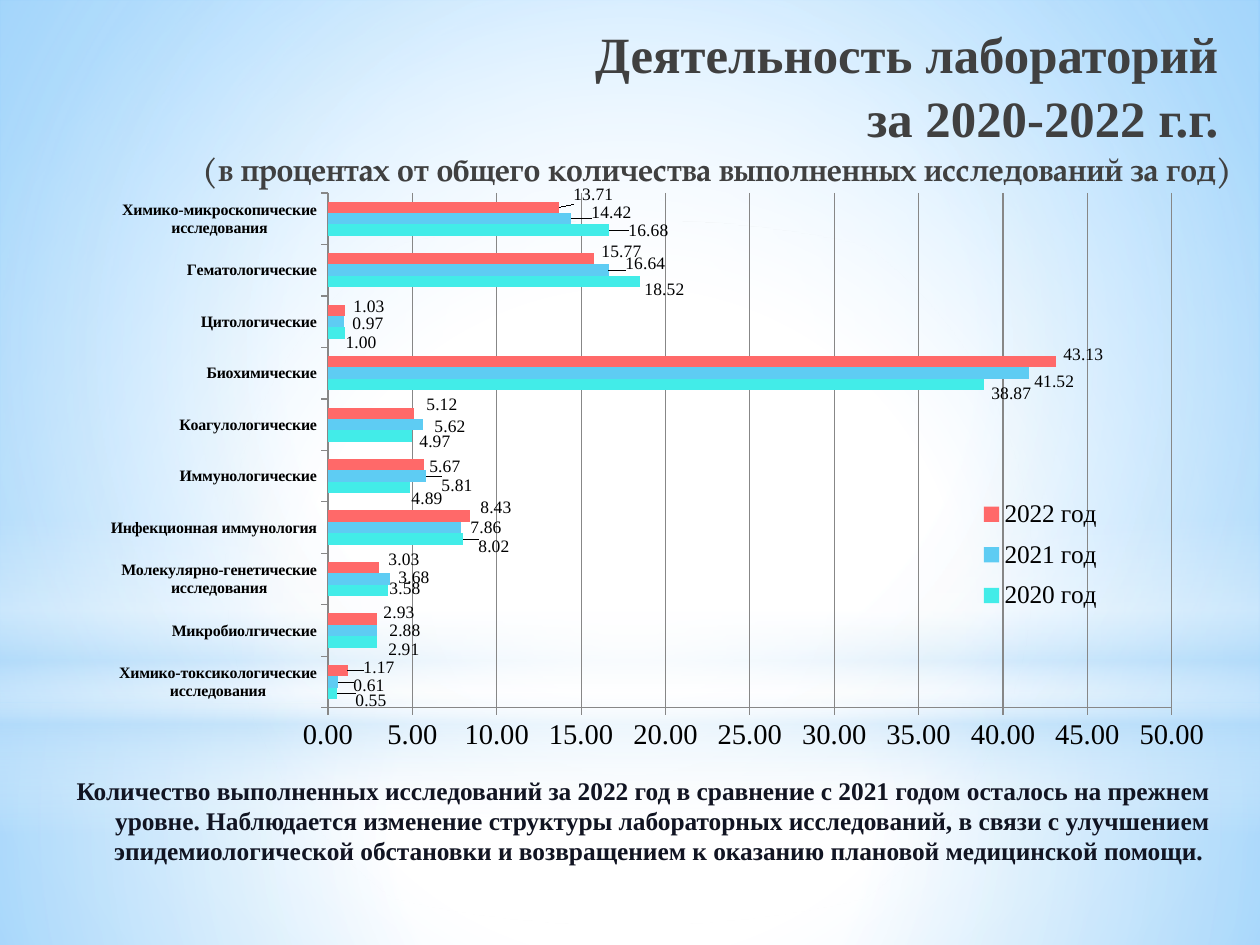
from copy import deepcopy
from lxml import etree
from pptx import Presentation
from pptx import util as u
from pptx.chart.data import CategoryChartData
from pptx.dml.color import RGBColor
from pptx.enum import chart as charts, shapes, text
from pptx.oxml import ns, parse_xml

SCALE = 8000
PAGE = (1260, 945)
SERIF, TITLE_SERIF = "Times New Roman", "TeX Gyre Pagella"
COLORS = {"title": "404040", "body": "111422", "black": "000000", "grid": "878787",
          "white": "FFFFFF", "sky": "B4DCFA", "blue": "63BCFF",
          "2020 год": "42ECE8", "2021 год": "5ECCF3", "2022 год": "FF6969"}
CATEGORIES = ["Химико-токсикологические исследования", "Микробиолгические",
              "Молекулярно-генетические исследования", "Инфекционная иммунология",
              "Иммунологические", "Коагулологические", "Биохимические",
              "Цитологические", "Гематологические", "Химико-микроскопические исследования"]
VALUES = {
    "2020 год": [0.55, 2.91, 3.58, 8.02, 4.89, 4.97, 38.87, 1.00, 18.52, 16.68],
    "2021 год": [0.61, 2.88, 3.68, 7.86, 5.81, 5.62, 41.52, 0.97, 16.64, 14.42],
    "2022 год": [1.17, 2.93, 3.03, 8.43, 5.67, 5.12, 43.13, 1.03, 15.77, 13.71]}
LABEL_SPOTS = {
    "2020 год": [(356, 701), (389, 650), (390, 589), (479, 547), (412, 499),
                 (420, 442), (992, 394), (346, 343), (645, 290), (629, 231)],
    "2021 год": [(354, 686), (390, 631), (399, 578), (471, 528), (442, 486),
                 (435, 427), (1035, 382), (353, 324), (626, 264), (592, 213)],
    "2022 год": [(364, 668), (384, 613), (389, 560), (481, 508), (430, 467),
                 (427, 405), (1064, 354), (354, 307), (602, 252), (574, 195)]}
PLOT = (328, 193, 844, 515)
LEGEND = (978, 488, 125, 134)
AXIS_MAX, LABEL_GAP = 50, 5
CENTER = (50, 50, 50, 50)


def emu(*lengths):
    """Turn px lengths into EMU."""
    return [u.Emu(length * SCALE) for length in lengths]


def color(name):
    """Return a named colour."""
    return RGBColor.from_string(COLORS[name])


def style(font, size, name=SERIF, bold=False, tone="black"):
    """Format a font."""
    font.size, font.name, font.bold = u.Pt(size), name, bold
    font.color.rgb = color(tone)


def paint_gradient(fill, holder, stops, focus=None):
    """Fill with a circular gradient around a focus, or a vertical one."""
    fill.gradient()
    marks = "".join(
        f'<a:gs pos="{spot * 1000}"><a:srgbClr val="{COLORS[tone]}">'
        f'<a:alpha val="{alpha * 1000}"/></a:srgbClr></a:gs>' for spot, tone, alpha in stops)
    shade = '<a:lin ang="5400000" scaled="0"/>'
    if focus:
        sides = " ".join(f'{side}="{part * 1000}"' for side, part in zip("ltrb", focus))
        shade = f'<a:path path="circle"><a:fillToRect {sides}/></a:path>'
    gradient = parse_xml(f'<a:gradFill {ns.nsdecls("a")} rotWithShape="1">'
                         f'<a:gsLst>{marks}</a:gsLst>{shade}</a:gradFill>')
    holder.replace(holder.find(ns.qn("a:gradFill")), gradient)


def add_glow(page, box, stops, focus=CENTER, kind=shapes.MSO_SHAPE.RECTANGLE):
    """Add one translucent background shape."""
    glow = page.shapes.add_shape(kind, *emu(*box))
    glow.shadow.inherit = False
    glow.line.fill.background()
    paint_gradient(glow.fill, glow._element.spPr, stops, focus)


def add_backdrop(page, box):
    """Paint the page and its sky bands."""
    left, top, width, height = box
    horizon = 704
    fill = page.background.fill
    fill.solid()
    holder = page._element.find(".//" + ns.qn("p:bgPr"))
    paint_gradient(fill, holder, [(0, "white", 100), (42, "white", 100), (100, "blue", 100)],
                   (24, 44, 24, 12))
    add_glow(page, (left, top + horizon, width, height - horizon),
             [(0, "white", 91), (37, "white", 76), (100, "sky", 79)])
    add_glow(page, (left, top, width, horizon),
             [(0, "white", 89), (48, "white", 62), (100, "sky", 79)])
    add_glow(page, (left, top + 519, width, 315),
             [(0, "white", 0), (29, "white", 30), (45, "sky", 40), (55, "white", 26),
              (65, "sky", 60), (100, "white", 0)], None)
    add_glow(page, (left, top + 221, width, horizon),
             [(0, "white", 100), (56, "white", 0)], kind=shapes.MSO_SHAPE.OVAL)


def add_title(page, box):
    """Fill the title placeholder and bring it above the backdrop."""
    title = page.shapes.title
    title.left, title.top, title.width, title.height = emu(*box)
    page.shapes._spTree.append(title._element)
    frame = title.text_frame
    frame.auto_size = text.MSO_AUTO_SIZE.NONE
    frame.vertical_anchor = text.MSO_ANCHOR.MIDDLE
    para = frame.paragraphs[0]
    para.alignment = text.PP_ALIGN.RIGHT
    para.line_spacing = 1.05
    lines = [("Деятельность лабораторий ", 32, SERIF), ("за 2020-2022 г.г. ", 32, SERIF),
             ("(в процентах от общего количества выполненных исследований за год)",
              20, TITLE_SERIF)]
    for number, (words, size, name) in enumerate(lines):
        if number:
            para.add_line_break()
            para._p[-1].append(deepcopy(span._r.rPr))
        span = para.add_run()
        span.text = words
        style(span.font, size, name, True, "title")


def add_layout(parent, place, index, edge=None):
    """Insert a manual layout of fractions into a chart part."""
    rules = [("layoutTarget", "inner")] if edge == "inner" else []
    if edge:
        rules += [("xMode", "edge"), ("yMode", "edge")]
    rules += zip("xywh", (round(part, 4) for part in place))
    for old in parent.findall(ns.qn("c:layout")):
        parent.remove(old)
    layout = etree.Element(ns.qn("c:layout"))
    manual = etree.SubElement(layout, ns.qn("c:manualLayout"))
    for tag, value in rules:
        etree.SubElement(manual, ns.qn("c:" + tag)).set("val", str(value))
    parent.insert(index, layout)


def fractions(part, box):
    """Express a part as fractions of the box."""
    left, top, width, height = box
    return ((part[0] - left) / width, (part[1] - top) / height,
            part[2] / width, part[3] / height)


def place_labels(series, order, box):
    """Format the value labels and move them to their spots."""
    labels = series.data_labels
    labels.show_value = True
    labels.number_format, labels.number_format_is_linked = "0.00", False
    style(labels.font, 11)
    pitch = PLOT[3] / len(CATEGORIES)
    bar = pitch / 4.5
    for index, (value, spot) in enumerate(zip(series.values, LABEL_SPOTS[series.name])):
        label = series.points[index].data_label
        style(label.font, 11)
        label.position = charts.XL_LABEL_POSITION.OUTSIDE_END
        start = PLOT[0] + PLOT[2] * value / AXIS_MAX + LABEL_GAP
        middle = PLOT[1] + PLOT[3] - pitch * (index + 0.5) + bar * (1 - order)
        shift = ((spot[0] - start) / box[2], (spot[1] - middle) / box[3])
        add_layout(labels._element.findall(ns.qn("c:dLbl"))[index], shift, 1)


def add_bars(page, box):
    """Add the bar chart of test shares by year."""
    data = CategoryChartData(number_format="0.00")
    data.categories = CATEGORIES
    for year, values in VALUES.items():
        data.add_series(year, values)
    chart = page.shapes.add_chart(charts.XL_CHART_TYPE.BAR_CLUSTERED, *emu(*box), data).chart
    style(chart.font, 18, TITLE_SERIF)
    chart.has_title = False
    chart.has_legend = True
    chart.legend.position = charts.XL_LEGEND_POSITION.RIGHT
    chart.legend.include_in_layout = False
    style(chart.legend.font, 16)
    add_layout(chart.legend._element, fractions(LEGEND, box), 1, "outer")
    add_layout(chart._chartSpace.chart.plotArea, fractions(PLOT, box), 0, "inner")
    names, scale = chart.category_axis, chart.value_axis
    style(names.tick_labels.font, 10, bold=True)
    style(scale.tick_labels.font, 18)
    scale.tick_labels.number_format = "0.00"
    scale.tick_labels.number_format_is_linked = False
    scale.minimum_scale, scale.maximum_scale, scale.major_unit = 0, AXIS_MAX, 5
    scale.has_major_gridlines = True
    for line in (names.format.line, scale.format.line, scale.major_gridlines.format.line):
        line.color.rgb, line.width = color("grid"), u.Pt(0.75)
    plot = chart.plots[0]
    plot.gap_width, plot.overlap, plot.vary_by_categories = 150, 0, False
    for order, series in enumerate(plot.series):
        series.format.fill.solid()
        series.format.fill.fore_color.rgb = color(series.name)
        place_labels(series, order, box)


def add_summary(page, box):
    """Add the closing paragraph."""
    frame = page.shapes.add_textbox(*emu(*box)).text_frame
    frame.word_wrap = True
    para = frame.paragraphs[0]
    para.alignment = text.PP_ALIGN.RIGHT
    span = para.add_run()
    span.text = ("Количество выполненных исследований за 2022 год в сравнение с 2021 годом "
                 "осталось на прежнем уровне. Наблюдается изменение структуры лабораторных "
                 "исследований, в связи с улучшением эпидемиологической обстановки и "
                 "возвращением к оказанию плановой медицинской помощи. ")
    style(span.font, 16, bold=True, tone="body")


def main():
    """Build and save the deck."""
    deck = Presentation()
    deck.slide_width, deck.slide_height = emu(*PAGE)
    page = deck.slides.add_slide(deck.slide_layouts[5])
    add_backdrop(page, (0, 0, *PAGE))
    add_title(page, (54, 14, 1189, 179))
    add_bars(page, (63, 158, 1141, 622))
    add_summary(page, (54, 769, 1167, 105))
    deck.save("out.pptx")


if __name__ == "__main__":
    main()
